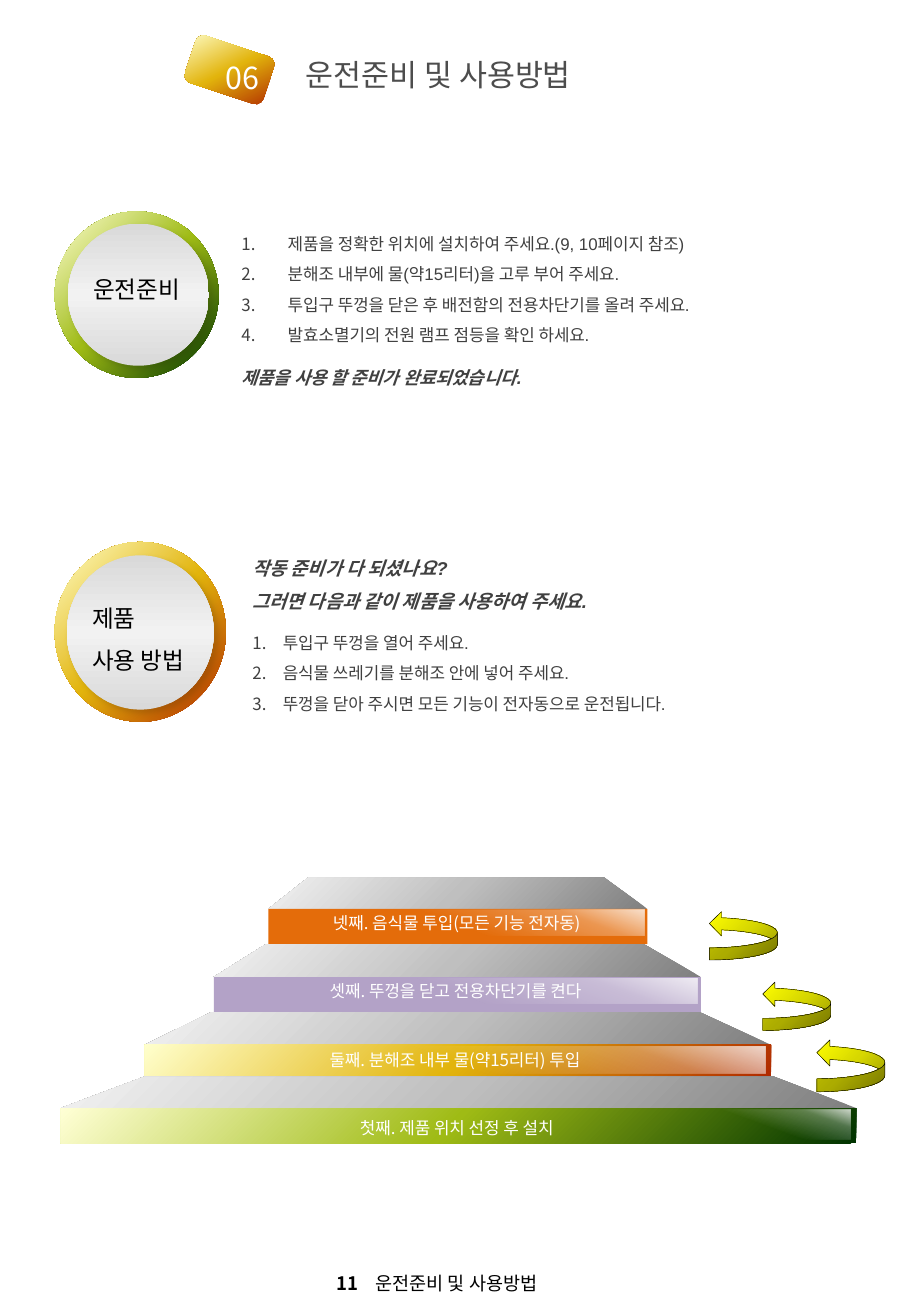
from collections import namedtuple

from lxml import etree
from pptx import Presentation
from pptx.dml.color import RGBColor
from pptx.enum import shapes, text
from pptx.oxml import ns, parse_xml
from pptx.util import Inches, Pt


class Theme:
    latin, korean = "Arial", "Noto Sans CJK KR"
    body, strong, note, label, heading = 10, 10.5, 11, 14, 18
    black, white, grey, title = "000000", "FFFFFF", "404040", "4D4D4D"
    purple, orange = "B3A2C7", "E46C0A"
    # Gradients: stops of (position, colour, opacity), then the angle; None is radial
    amber = ([(0, "B02A00", 100), (50, "E2B40C", 100), (100, "FFFFCC", 100)], 225)
    green = ([(0, "003300", 100), (51, "9FBB15", 100), (100, "FFFFD5", 100)], 225)
    silver = ([(0, "D9D9D9", 100), (50, "F2F2F2", 100), (100, "D9D9D9", 100)], 90)
    slab = ([(0, "808080", 100), (50, "BFBFBF", 100), (100, "F2F2F2", 100)], 225)
    gloss = ([(0, white, 80), (20, white, 29), (51, white, 0)], 110)
    yellow = ([(0, "979700", 100), (50, "D7D700", 100), (100, "FFFF00", 100)], None)


PREPARE = ["제품을 정확한 위치에 설치하여 주세요.(9, 10페이지 참조)",
           "분해조 내부에 물(약15리터)을 고루 부어 주세요.",
           "투입구 뚜껑을 닫은 후 배전함의 전용차단기를 올려 주세요.",
           "발효소멸기의 전원 램프 점등을 확인 하세요."]
READY = "제품을 사용 할 준비가 완료되었습니다."
QUESTIONS = ["작동 준비가 다 되셨나요?", "그러면 다음과 같이 제품을 사용하여 주세요."]
USE = ["투입구 뚜껑을 열어 주세요.",
       "음식물 쓰레기를 분해조 안에 넣어 주세요.",
       "뚜껑을 닫아 주시면 모든 기능이 전자동으로 운전됩니다."]
TITLE = "운전준비 및 사용방법"

# Ring frame, disc frame, ring fill
BADGES = [((0.45, 4.46, 1.41, 1.48), (0.55, 4.57, 1.21, 1.27), Theme.amber),
          ((0.45, 1.74, 1.35, 1.37), (0.56, 1.84, 1.16, 1.17), Theme.green)]

PEAK = 7.22
Tier = namedtuple("Tier", "label left right back_left back_right top height fill "
                          "gloss_left gloss_right gloss_height")
TIERS = [
    Tier("넷째. 음식물 투입(모든 기능 전자동)", 2.21, 5.33, 2.54, 4.97, 7.48, 0.29,
         Theme.orange, 2.21, 5.31, 0.21),
    Tier("셋째. 뚜껑을 닫고 전용차단기를 켠다", 1.76, 5.77, 2.19, 5.3, 8.04, 0.29,
         Theme.purple, 1.76, 5.74, 0.21),
    Tier("둘째. 분해조 내부 물(약15리터) 투입", 1.19, 6.35, 1.74, 5.76, 8.6, 0.26,
         Theme.amber, 1.19, 6.3, 0.22),
    Tier("첫째. 제품 위치 선정 후 설치", 0.5, 7.05, 1.19, 6.37, 9.12, 0.29,
         Theme.green, 5.59, 7.0, 0.25),
]
ARROWS = [(6.79, 8.49, 0.43, 0.56), (6.36, 8, 0.4, 0.56), (5.92, 7.42, 0.4, 0.56)]

deck = Presentation()
deck.slide_width, deck.slide_height = Inches(7.5), Inches(10.83)
page = deck.slides.add_slide(deck.slide_layouts[6])


def child(parent, tag, **attributes):
    return etree.SubElement(parent, ns.qn(tag), attributes)


def paint(shape, fill):
    """Fill with a colour or a gradient, without line or shadow."""
    shape.shadow.inherit = False
    shape.line.fill.background()
    shape.fill.solid()
    if isinstance(fill, str):
        shape.fill.fore_color.rgb = RGBColor.from_string(fill)
        return shape
    stops, angle = fill
    gradient = parse_xml(f'<a:gradFill {ns.nsdecls("a")} rotWithShape="1"/>')
    stop_list = child(gradient, "a:gsLst")
    for position, colour, opacity in stops:
        stop = child(stop_list, "a:gs", pos=str(position * 1000))
        tint = child(stop, "a:srgbClr", val=colour)
        if opacity < 100:
            child(tint, "a:alpha", val=str(opacity * 1000))
    if angle is None:
        circle = child(gradient, "a:path", path="circle")
        child(circle, "a:fillToRect", l="100000", t="100000")
    else:
        child(gradient, "a:lin", ang=str(angle * 60000), scaled="0")
    solid = shape.element.spPr.find(ns.qn("a:solidFill"))
    solid.getparent().replace(solid, gradient)
    return shape


def add_preset(kind, frame, fill, rotation=0):
    shape = page.shapes.add_shape(kind, *map(Inches, frame))
    shape.rotation = rotation
    return paint(shape, fill)


def add_box(frame):
    box = page.shapes.add_textbox(*map(Inches, frame))
    box.text_frame.word_wrap = True
    return box


def write(box, words, size=Theme.body, colour=Theme.black, font=Theme.korean, bold=False,
          italic=False, align=text.PP_ALIGN.LEFT, spacing=1.0, indent=None, tab=None, join=False):
    """Add a paragraph (numbered if indent is given), or join the last one."""
    frame = box.text_frame
    para = frame.paragraphs[-1]
    if para.runs and not join:
        para = frame.add_paragraph()
    if not join:
        para.alignment, para.line_spacing = align, spacing
        properties = para._p.get_or_add_pPr()
        if indent:
            properties.set("marL", str(Inches(indent)))
            properties.set("indent", str(-Inches(indent)))
            child(properties, "a:buAutoNum", type="arabicPeriod")
        if tab:
            child(child(properties, "a:tabLst"), "a:tab", pos=str(Inches(tab)), algn="l")
    span = para.add_run()
    span.text = words
    span.font.size, span.font.name = Pt(size), font
    span.font.bold, span.font.italic = bold, italic
    span.font.color.rgb = RGBColor.from_string(colour)
    child(span._r.get_or_add_rPr(), "a:ea", typeface=Theme.korean)


def add_badge(ring, disc, fill):
    add_preset(shapes.MSO_SHAPE.OVAL, ring, fill)
    face = add_preset(shapes.MSO_SHAPE.OVAL, disc, Theme.silver)
    effects = face.element.spPr.find(ns.qn("a:effectLst"))
    shadow = child(effects, "a:outerShdw", blurRad=str(Pt(4)), dist=str(Pt(3)),
                   dir=str(45 * 60000), algn="tl", rotWithShape="0")
    child(child(shadow, "a:srgbClr", val=Theme.black), "a:alpha", val="15000")


def add_tier(tier, back):
    outline = page.shapes.build_freeform(Inches(tier.left), Inches(tier.top))
    corners = [(tier.right, tier.top), (tier.back_right, back), (tier.back_left, back)]
    outline.add_line_segments([(Inches(x), Inches(y)) for x, y in corners], close=True)
    paint(outline.convert_to_shape(), Theme.slab)
    bar = (tier.left, tier.top, tier.right - tier.left, tier.height)
    add_preset(shapes.MSO_SHAPE.RECTANGLE, bar, tier.fill)
    gloss = (tier.gloss_left, tier.top + 0.01, tier.gloss_right - tier.gloss_left,
             tier.gloss_height)
    holder = add_preset(shapes.MSO_SHAPE.RECTANGLE, gloss, Theme.gloss)
    if tier.gloss_left > tier.left:
        holder = add_box((0.62, 9.15, 6.28, 0.27))
    holder.text_frame.vertical_anchor = text.MSO_ANCHOR.MIDDLE
    write(holder, tier.label, colour=Theme.white, align=text.PP_ALIGN.CENTER)


for badge in BADGES:
    add_badge(*badge)
use_label = add_box((0.66, 4.8, 1.1, 0.81))
for words in ("제품", "사용 방법"):
    write(use_label, words, size=Theme.label, spacing=1.5)
write(add_box((0.43, 2.21, 1.39, 0.34)), "운전준비", size=Theme.label,
      align=text.PP_ALIGN.CENTER)

body = dict(font=Theme.latin, colour=Theme.grey, spacing=1.5)
emphasis = dict(body, bold=True, italic=True)
prepare_box = add_box((1.89, 1.79, 5.5, 1.46))
for step in PREPARE:
    write(prepare_box, step, indent=0.38, **body)
write(prepare_box, READY, size=Theme.strong, **dict(emphasis, spacing=2.0))

use_box = add_box((1.98, 4.44, 5.4, 1.5))
for question in QUESTIONS:
    write(use_box, question, size=Theme.note, **emphasis)
for number, step in enumerate(USE):
    write(use_box, step, indent=0.25, **dict(body, spacing=1.5 if number else 2.0))

back_edge = PEAK
for tier in TIERS:
    add_tier(tier, back_edge)
    back_edge = tier.top + tier.height

for frame in ARROWS:
    arrow = add_preset(shapes.MSO_SHAPE.CURVED_UP_ARROW, frame, Theme.yellow, 270)
    arrow.line.color.rgb = RGBColor.from_string(Theme.black)
    arrow.line.width = Pt(0.25)

footer = add_box((2.67, 10.42, 3.03, 0.29))
write(footer, "11\t", size=Theme.note, bold=True, tab=0.32)
write(footer, TITLE, size=Theme.note, join=True)

add_preset(shapes.MSO_SHAPE.ROUNDED_RECTANGLE, (1.55, 0.37, 0.68, 0.41), Theme.amber, 18.3)
write(add_box((1.76, 0.44, 0.52, 0.4)), "06", size=Theme.heading, colour=Theme.white)
write(add_box((2.42, 0.41, 2.73, 0.4)), TITLE, size=Theme.heading, colour=Theme.title)

deck.save("out.pptx")
